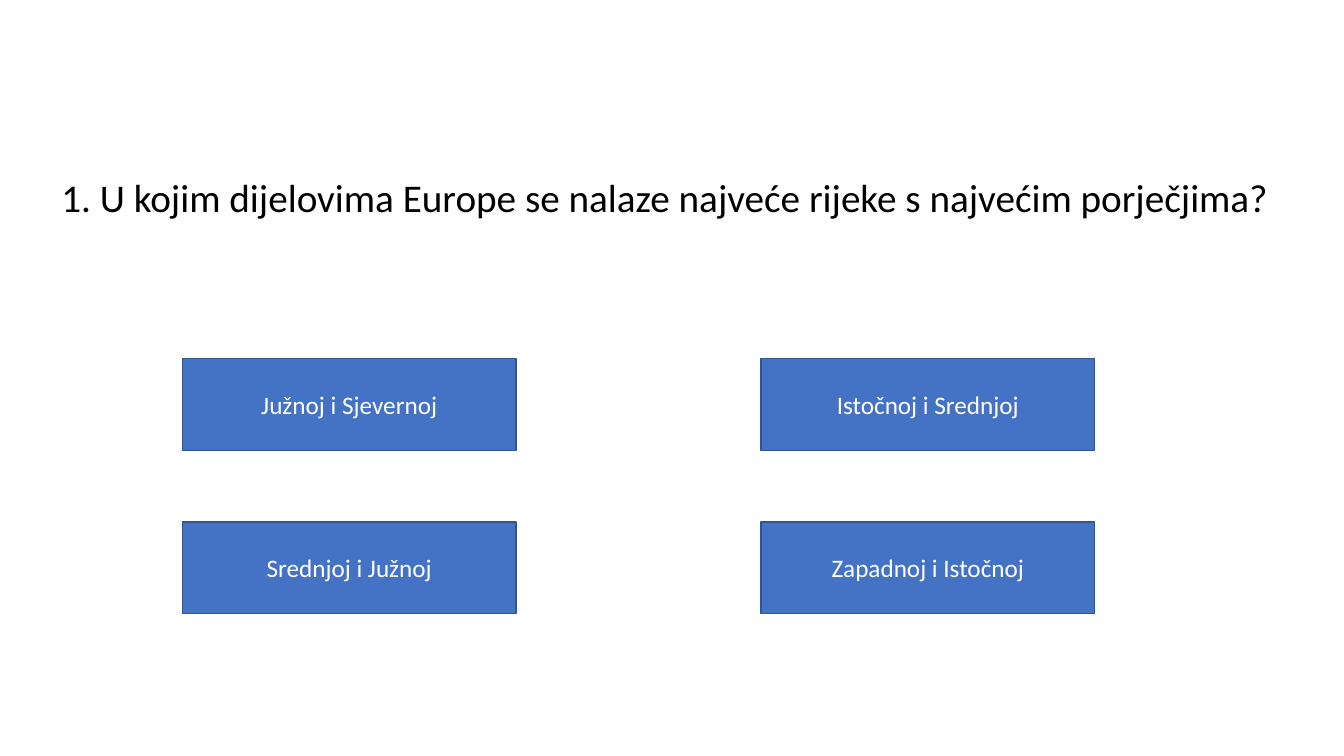
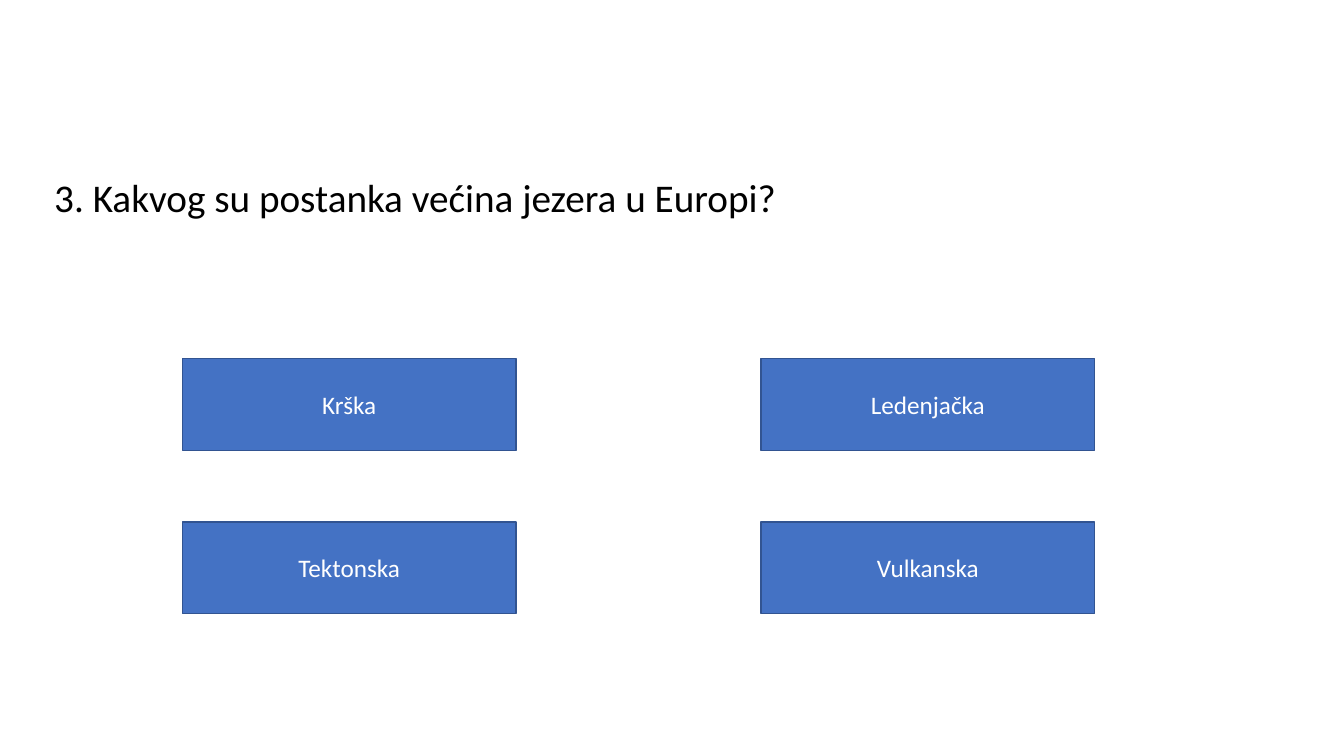
import pptx
import pptx.dml.color
import pptx.enum.shapes
import pptx.enum.text
import pptx.util

Pt = pptx.util.Pt
RGBColor = pptx.dml.color.RGBColor

BLACK = RGBColor(0x00, 0x00, 0x00)
WHITE = RGBColor(0xFF, 0xFF, 0xFF)
BLUE = RGBColor(0x44, 0x72, 0xC4)
DARK_BLUE = RGBColor(0x32, 0x54, 0x91)
FONT = "Calibri"

COLUMNS = 2
ANSWER_W, ANSWER_H = 238.3, 65.5

# Question, its left edge, and the answers row by row
QUIZ = [
    ("1. U kojim dijelovima Europe se nalaze najveće rijeke s najvećim porječjima?", 36.7,
     ["Južnoj i Sjevernoj", "Istočnoj i Srednjoj", "Srednjoj i Južnoj", "Zapadnoj i Istočnoj"]),
    ("3. Kakvog su postanka većina jezera u Europi?", 31.7,
     ["Krška", "Ledenjačka", "Tektonska", "Vulkanska"]),
]


def write(tf, text, size, color):
    tf.word_wrap = True
    p = tf.paragraphs[0]
    p.text = text
    font = p.runs[0].font
    font.name, font.size = FONT, Pt(size)
    font.color.rgb = color
    return p


def add_question(s, text, x, y, w, h):
    tf = s.shapes.add_textbox(Pt(x), Pt(y), Pt(w), Pt(h)).text_frame
    write(tf, text, 28, BLACK)
    tf.auto_size = pptx.enum.text.MSO_AUTO_SIZE.SHAPE_TO_FIT_TEXT


def add_answer(s, text, x, y, w, h):
    sp = s.shapes.add_shape(pptx.enum.shapes.MSO_SHAPE.RECTANGLE, Pt(x), Pt(y), Pt(w), Pt(h))
    sp.shadow.inherit = False
    sp.fill.solid()
    sp.fill.fore_color.rgb = BLUE
    sp.line.color.rgb = DARK_BLUE
    sp.line.width = Pt(1)
    sp.text_frame.vertical_anchor = pptx.enum.text.MSO_ANCHOR.MIDDLE
    p = write(sp.text_frame, text, 18, WHITE)
    p.alignment = pptx.enum.text.PP_ALIGN.CENTER


def add_answers(s, answers, x, y, w, h):
    """Spread the answers over a grid that fills the given box."""
    rows = len(answers) // COLUMNS
    step_x = (w - ANSWER_W) / (COLUMNS - 1)
    step_y = (h - ANSWER_H) / (rows - 1)
    for i, answer in enumerate(answers):
        row, col = divmod(i, COLUMNS)
        add_answer(s, answer, x + col * step_x, y + row * step_y, ANSWER_W, ANSWER_H)


def add_quiz_slide(prs, question, question_x, answers):
    s = prs.slides.add_slide(prs.slide_layouts[6])
    add_question(s, question, question_x, 120.2, 897, 41.2)
    add_answers(s, answers, 130.3, 256.1, 651.6, 182.2)


def main():
    prs = pptx.Presentation()
    prs.slide_width, prs.slide_height = Pt(960), Pt(540)
    for question, question_x, answers in QUIZ:
        add_quiz_slide(prs, question, question_x, answers)
    prs.save("out.pptx")


if __name__ == "__main__":
    main()
